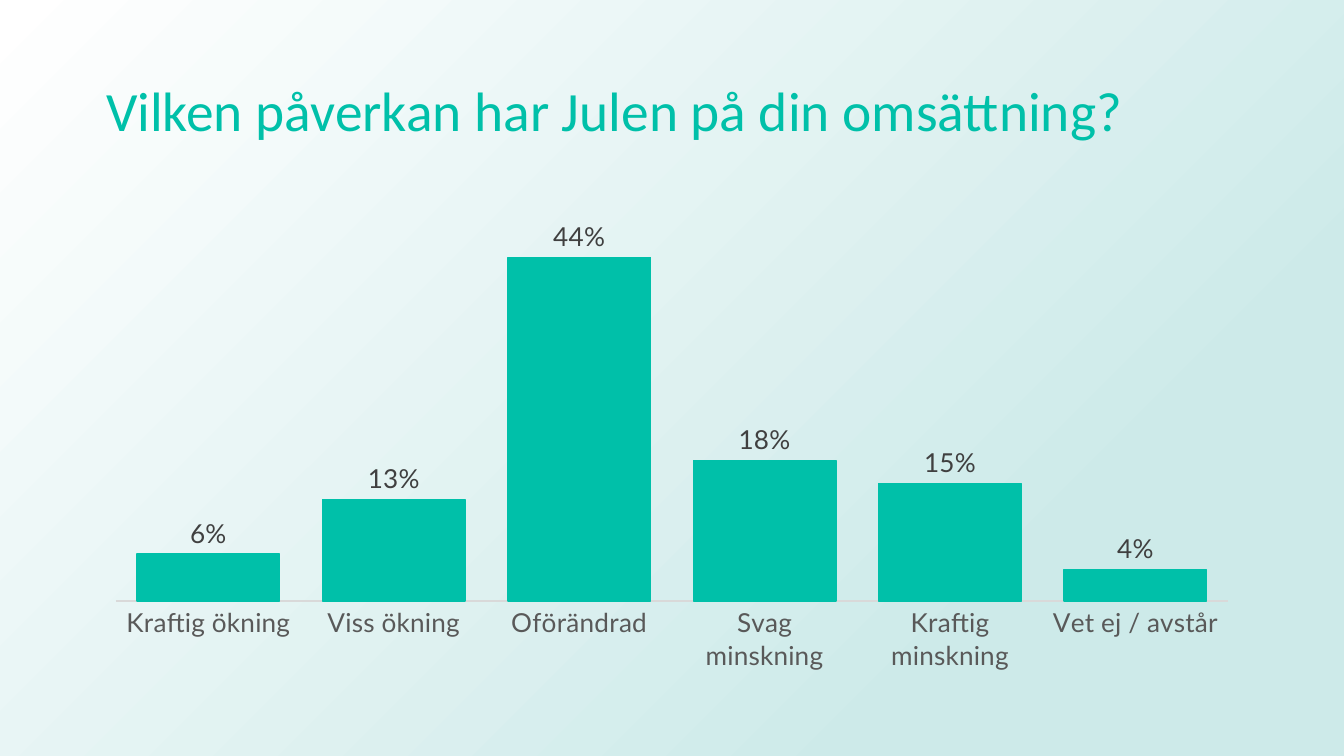
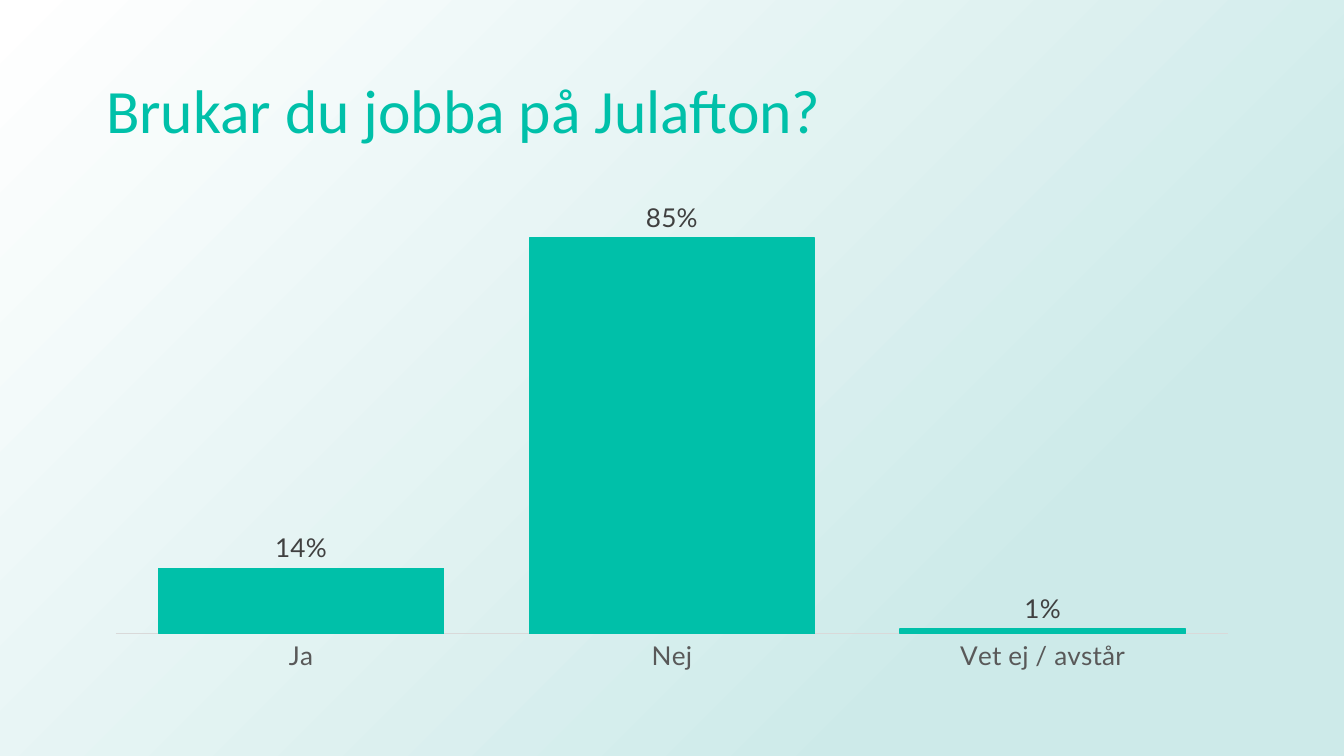
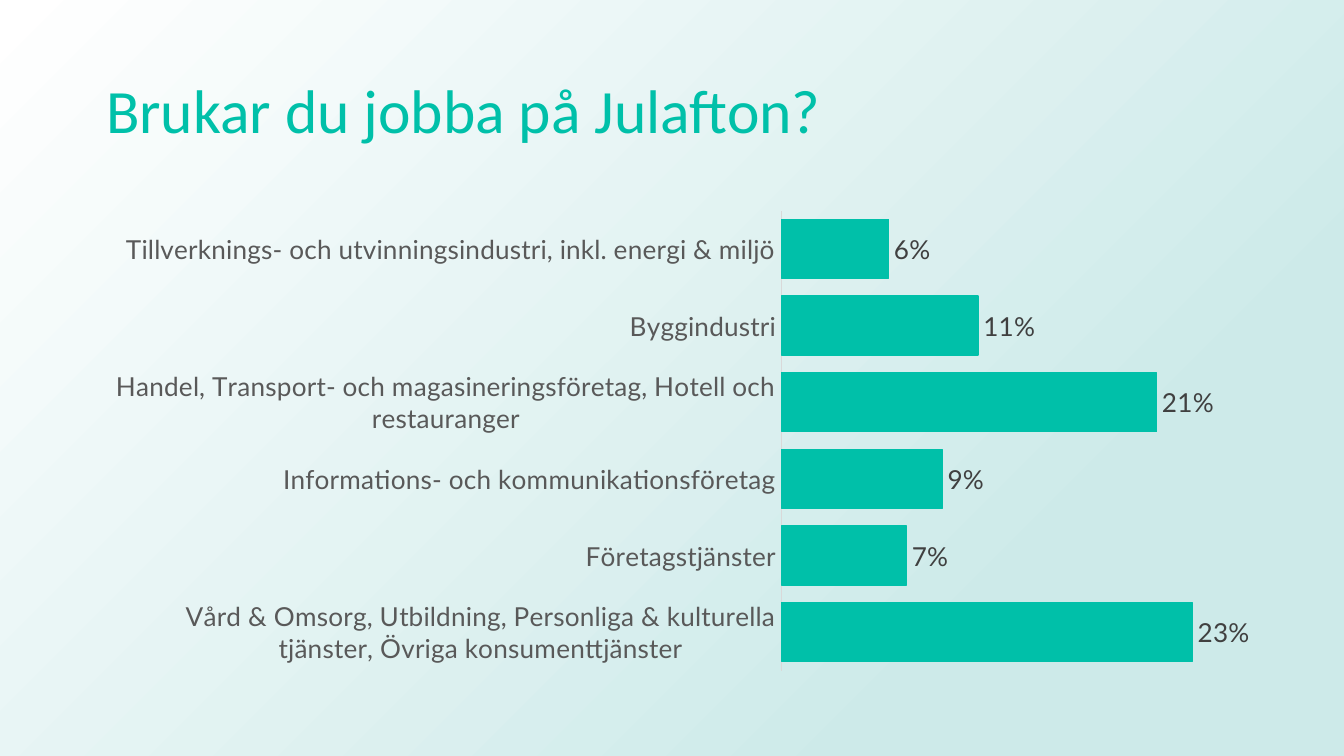
from pptx import Presentation
from pptx.chart.data import CategoryChartData
from pptx.dml.color import RGBColor
from pptx.enum.chart import XL_CHART_TYPE, XL_LABEL_POSITION, XL_TICK_LABEL_POSITION, XL_TICK_MARK
from pptx.enum.shapes import MSO_SHAPE
from pptx.enum.text import MSO_ANCHOR, MSO_AUTO_SIZE, PP_ALIGN
from pptx.oxml import parse_xml
from pptx.oxml.ns import nsdecls
from pptx.util import Cm, Pt

COLOURS = {
    "accent": "00C0A9",
    "mist": "CDEAE9",
    "white": "FFFFFF",
    "black": "000000",
    "category": "595959",
    "label": "404040",
    "axis": "D9D9D9",
}
TITLE_FONT = "Calibri"
CHART_FONT = "Lato"
CHART_SIZE = 14
LEFT, WIDTH = Cm(1.75), Cm(21.9)
TITLE_BOX = {"left": LEFT, "top": Cm(0.76), "width": WIDTH, "height": Cm(2.77)}
CHART_BOX = (LEFT, Cm(3.8), WIDTH, Cm(9.06))

TITLE_FRAME = {
    "word_wrap": True,
    "auto_size": MSO_AUTO_SIZE.NONE,
    "vertical_anchor": MSO_ANCHOR.MIDDLE,
}
TITLE_PARA = {"alignment": PP_ALIGN.LEFT, "line_spacing": 0.9}
PLOT = {"gap_width": 30, "vary_by_categories": False, "has_data_labels": True}
LABELS = {
    "show_value": True,
    "number_format": "0%",
    "number_format_is_linked": False,
    "position": XL_LABEL_POSITION.OUTSIDE_END,
}
CATEGORY_AXIS = {
    "major_tick_mark": XL_TICK_MARK.NONE,
    "minor_tick_mark": XL_TICK_MARK.NONE,
    "tick_label_position": XL_TICK_LABEL_POSITION.NEXT_TO_AXIS,
    "has_major_gridlines": False,
}
VALUE_AXIS = {"visible": False, "has_major_gridlines": False, "minimum_scale": 0}

IMPACT = {
    "Kraftig ökning": 0.06,
    "Viss ökning": 0.13,
    "Oförändrad": 0.44,
    "Svag minskning": 0.18,
    "Kraftig minskning": 0.15,
    "Vet ej / avstår": 0.04,
}
WORKING = {"Ja": 0.14, "Nej": 0.85, "Vet ej / avstår": 0.01}
WORKING_BY_INDUSTRY = {
    "Tillverknings- och utvinningsindustri, inkl. energi & miljö": 0.06,
    "Byggindustri": 0.11,
    "Handel, Transport- och magasineringsföretag, Hotell och restauranger": 0.21,
    "Informations- och kommunikationsföretag": 0.09,
    "Företagstjänster": 0.07,
    "Vård & Omsorg, Utbildning, Personliga & kulturella tjänster, Övriga konsumenttjänster": 0.23,
}


def apply(target, values):
    for name, value in values.items():
        setattr(target, name, value)


def colour(name):
    return RGBColor.from_string(COLOURS[name])


def style_font(font, family, size, colour_name):
    apply(font, {"name": family, "size": Pt(size), "bold": False})
    font.color.rgb = colour(colour_name)


class SurveyDeck:
    def __init__(self):
        self.deck = Presentation()
        apply(self.deck, {"slide_width": Cm(25.4), "slide_height": Cm(14.29)})
        self.layout = self.deck.slide_layouts.get_by_name("Title Only")
        self.page = None

    def add_page(self):
        self.page = self.deck.slides.add_slide(self.layout)

    def add_shared_backdrop(self):
        box = self.page.shapes.add_shape(
            MSO_SHAPE.RECTANGLE, 0, 0, self.deck.slide_width, self.deck.slide_height
        )
        box.shadow.inherit = False
        box.line.fill.background()
        box.fill.background()
        gradient = parse_xml(
            f'<a:gradFill {nsdecls("a")} rotWithShape="1"><a:gsLst>'
            f'<a:gs pos="23000"><a:srgbClr val="{COLOURS["mist"]}"/></a:gs>'
            f'<a:gs pos="100000"><a:srgbClr val="{COLOURS["white"]}"/></a:gs></a:gsLst>'
            '<a:path path="circle"><a:fillToRect l="100000" t="100000"/></a:path>'
            '<a:tileRect r="-100000" b="-100000"/></a:gradFill>'
        )
        blank = box.element.xpath("./p:spPr/a:noFill")[0]
        blank.getparent().replace(blank, gradient)
        box.element.nvSpPr.cNvPr.id = 90
        self.layout.shapes.element.insert(2, box.element)

    def add_title(self, text, size):
        title = self.page.shapes.title
        apply(title, TITLE_BOX)
        apply(title.text_frame, TITLE_FRAME)
        para = title.text_frame.paragraphs[0]
        apply(para, TITLE_PARA)
        span = para.add_run()
        span.text = text
        style_font(span.font, TITLE_FONT, size, "accent")

    def add_bars(self, kind, shares):
        data = CategoryChartData(number_format="0%")
        data.categories = list(shares)
        data.add_series("Series 1", list(shares.values()))
        chart = self.page.shapes.add_chart(kind, *CHART_BOX, data).chart
        apply(chart, {"has_legend": False, "has_title": False})
        style_font(chart.font, CHART_FONT, CHART_SIZE, "black")

        plot = chart.plots[0]
        apply(plot, PLOT)
        apply(plot.data_labels, LABELS)
        style_font(plot.data_labels.font, CHART_FONT, CHART_SIZE, "label")

        series = plot.series[0]
        series.invert_if_negative = False
        series.format.fill.solid()
        series.format.fill.fore_color.rgb = colour("accent")
        self.style_line(series.format.line, "accent")

        axis = chart.category_axis
        apply(axis, CATEGORY_AXIS)
        axis.reverse_order = kind == XL_CHART_TYPE.BAR_CLUSTERED
        style_font(axis.tick_labels.font, CHART_FONT, CHART_SIZE, "category")
        self.style_line(axis.format.line, "axis")
        apply(chart.value_axis, VALUE_AXIS)

    def style_line(self, line, colour_name):
        line.color.rgb = colour(colour_name)
        line.width = Pt(0.75)


def main():
    survey = SurveyDeck()
    columns, bars = XL_CHART_TYPE.COLUMN_CLUSTERED, XL_CHART_TYPE.BAR_CLUSTERED
    pages = [
        ("Vilken påverkan har Julen på din omsättning?", 29.7, columns, IMPACT),
        ("Brukar du jobba på Julafton?", 33, columns, WORKING),
        ("Brukar du jobba på Julafton?", 33, bars, WORKING_BY_INDUSTRY),
    ]
    for number, (question, size, kind, shares) in enumerate(pages):
        survey.add_page()
        if number == 0:
            survey.add_shared_backdrop()
        survey.add_title(question, size)
        survey.add_bars(kind, shares)
    survey.deck.save("out.pptx")


if __name__ == "__main__":
    main()
